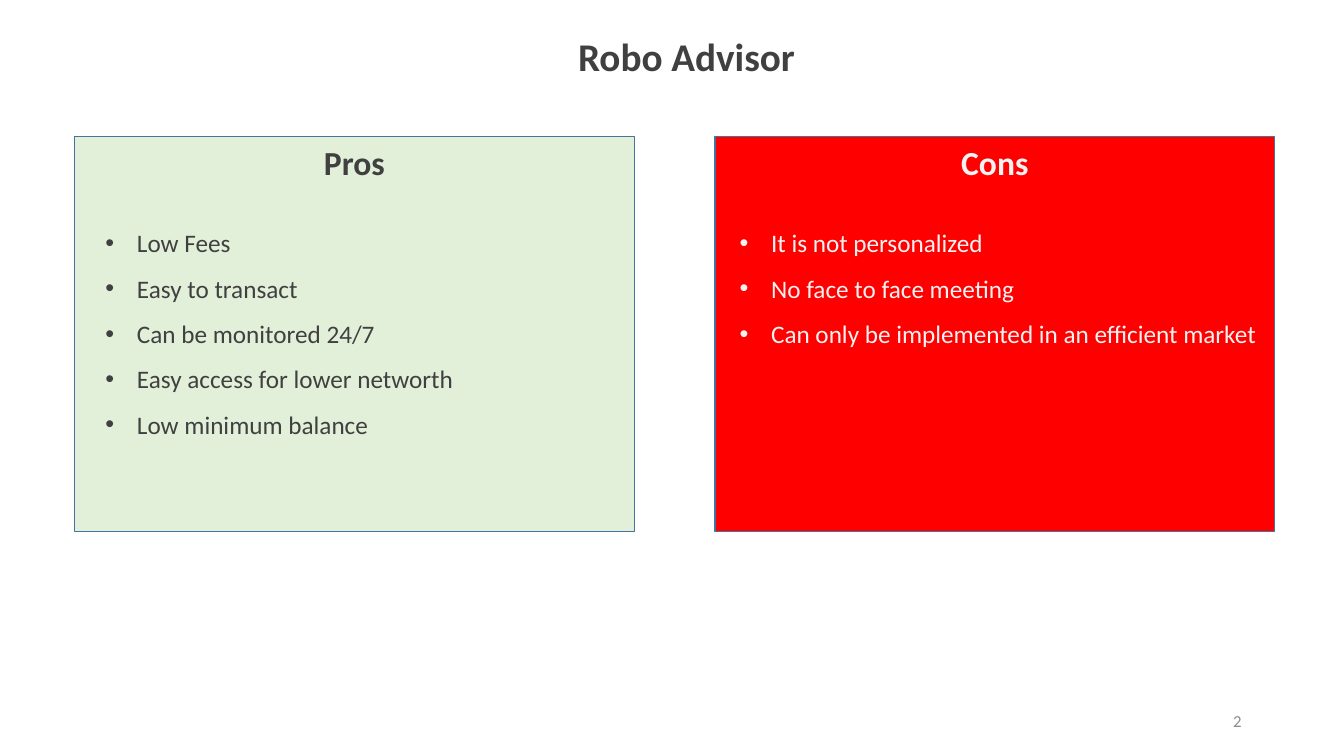
from lxml import etree
from pptx import Presentation
from pptx import util as u
from pptx.dml.color import RGBColor
from pptx.enum import shapes, text
from pptx.oxml.ns import qn

COLORS = {
    "dark": "404040",
    "light": "F2F2F2",
    "green": "E2F0D9",
    "red": "FF0000",
    "border": "43739E",
    "number": "8C8C8C",
}


class Deck:
    EMU_PER_PX = 9525
    FONT = "Calibri"

    def __init__(self, width, height):
        self.prs = Presentation()
        self.prs.slide_width = self.px(width)
        self.prs.slide_height = self.px(height)
        self.s = self.prs.slides.add_slide(self.prs.slide_layouts[5])

    def px(self, n):
        return u.Emu(n * self.EMU_PER_PX)

    def color(self, name):
        return RGBColor.from_string(COLORS[name])

    def format(self, p, size, color, bold=False, align=text.PP_ALIGN.LEFT):
        p.alignment = align
        for r in p.runs:
            r.font.name = self.FONT
            r.font.size = u.Pt(size)
            r.font.bold = bold
            r.font.color.rgb = self.color(color)

    def bullet(self, p, margin, hang):
        pPr = p._p.get_or_add_pPr()
        pPr.set("marL", str(self.px(margin)))
        pPr.set("indent", str(-self.px(hang)))
        etree.SubElement(pPr, qn("a:buFont")).set("typeface", "Arial")
        etree.SubElement(pPr, qn("a:buChar")).set("char", "•")

    def title(self, words, x, y, w, h):
        sp = self.s.shapes.title
        sp.left, sp.top, sp.width, sp.height = map(self.px, (x, y, w, h))
        tf = sp.text_frame
        tf.text = words
        tf.word_wrap = False
        tf.auto_size = text.MSO_AUTO_SIZE.SHAPE_TO_FIT_TEXT
        tf.vertical_anchor = text.MSO_ANCHOR.TOP
        self.format(tf.paragraphs[0], 28, "dark", bold=True)

    def page_number(self, words, x, y, w, h):
        sp = self.s.shapes.add_textbox(*map(self.px, (x, y, w, h)))
        tf = sp.text_frame
        tf.text = words
        tf.word_wrap = True
        tf.vertical_anchor = text.MSO_ANCHOR.MIDDLE
        self.format(tf.paragraphs[0], 12, "number", align=text.PP_ALIGN.RIGHT)

    def panel(self, heading, points, x, y, w, h, fill, color, line, margin):
        sp = self.s.shapes.add_shape(
            shapes.MSO_SHAPE.RECTANGLE, *map(self.px, (x, y, w, h)))
        sp.shadow.inherit = False
        sp.fill.solid()
        sp.fill.fore_color.rgb = self.color(fill)
        sp.line.color.rgb = self.color("border")
        sp.line.width = u.Pt(line)
        tf = sp.text_frame
        tf.word_wrap = True
        tf.vertical_anchor = text.MSO_ANCHOR.TOP
        p = tf.paragraphs[0]
        p.text = heading
        p.space_after = u.Pt(22)
        self.format(p, 24, color, bold=True, align=text.PP_ALIGN.CENTER)
        for point in points:
            p = tf.add_paragraph()
            p.text = point
            p.line_spacing = 1.5
            self.format(p, 18, color)
            self.bullet(p, margin, 30)


def main():
    deck = Deck(1280, 720)
    deck.page_number("2", 904, 667, 288, 38)
    deck.title("Robo Advisor", 541, 26, 228, 55)
    pros = ["Low Fees", "Easy to transact", "Can be monitored 24/7",
            "Easy access for lower networth", "Low minimum balance"]
    cons = ["It is not personalized", "No face to face meeting",
            "Can only be implemented in an efficient market"]
    deck.panel("Pros", pros, 71, 130, 533, 376, "green", "dark", 0.25, 50)
    deck.panel("Cons", cons, 681, 130, 533, 376, "red", "light", 1, 44)
    deck.prs.save("out.pptx")


if __name__ == "__main__":
    main()
